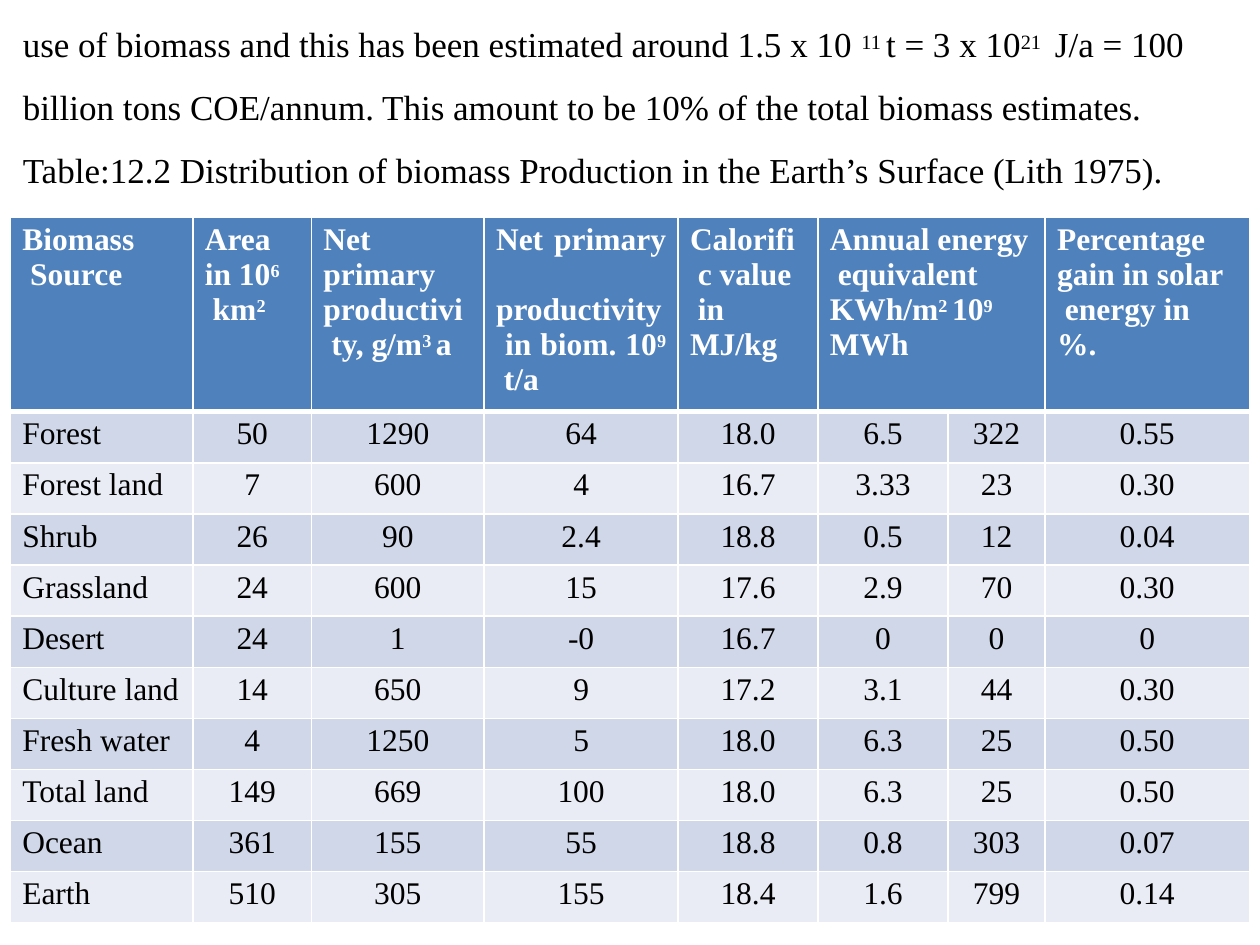
from lxml.etree import SubElement
from pptx import Presentation
from pptx.dml.color import RGBColor
from pptx.enum.text import PP_ALIGN
from pptx.oxml.ns import qn
from pptx.util import Cm, Pt

# Content: text between two ^ marks is superscript, \v is a line break
INTRODUCTION = [
    "use of biomass and this has been estimated around 1.5 x 10 ^11 ^t = 3 x 10^21 ^ J/a = 100",
    "billion tons COE/annum. This amount to be 10% of the total biomass estimates.",
    "Table:12.2 Distribution of biomass Production in the Earth’s Surface (Lith 1975).",
]
HEADERS = [
    "Biomass\v Source",
    "Area in 10^6^\v km^2^",
    "Net primary\vproductivi\v ty, g/m^3 ^a",
    "Net primary\v productivity\v in biom. 10^9^\v t/a",
    "Calorifi\v c value\v in MJ/kg",
    "Annual energy\v equivalent\vKWh/m^2 ^10^9^\vMWh",
    "",
    "Percentage gain in solar\v energy in\v%.",
]
ROWS = [
    ("Forest", "50", "1290", "64", "18.0", "6.5", "322", "0.55"),
    ("Forest land", "7", "600", "4", "16.7", "3.33", "23", "0.30"),
    ("Shrub", "26", "90", "2.4", "18.8", "0.5", "12", "0.04"),
    ("Grassland", "24", "600", "15", "17.6", "2.9", "70", "0.30"),
    ("Desert", "24", "1", "-0", "16.7", "0", "0", "0"),
    ("Culture land", "14", "650", "9", "17.2", "3.1", "44", "0.30"),
    ("Fresh water", "4", "1250", "5", "18.0", "6.3", "25", "0.50"),
    ("Total land", "149", "669", "100", "18.0", "6.3", "25", "0.50"),
    ("Ocean", "361", "155", "55", "18.8", "0.8", "303", "0.07"),
    ("Earth", "510", "305", "155", "18.4", "1.6", "799", "0.14"),
]
COLUMN_WIDTHS = [3.68, 2.39, 3.48, 3.91, 2.82, 2.62, 1.96, 4.11]
HEADER_HEIGHT, ROW_HEIGHT = 3.88, 1.03
JUSTIFIED_COLUMN, MERGED_COLUMN = 3, 5

THEME = {
    "font": "Times New Roman",
    "text": "000000",
    "light": "FFFFFF",
    "header": "4F81BC",
    "bands": ("D0D7E8", "E9ECF4"),
    "body_size": 20,
    "table_size": 18,
}


def write_text(paragraph, text, *, size, color=THEME["text"], bold=False,
               align=PP_ALIGN.LEFT, indent=0, right_indent=0, space_before=0):
    paragraph.alignment = align
    paragraph.space_before = Pt(space_before)
    properties = paragraph._p.get_or_add_pPr()
    properties.set("marL", str(Cm(indent)))
    properties.set("marR", str(Cm(right_indent)))
    properties.set("indent", "0")
    for part_index, part in enumerate(text.split("^")):
        for line_index, line in enumerate(part.split("\v")):
            if line_index:
                paragraph.add_line_break()
            if not line:
                continue
            run = paragraph.add_run()
            run.text = line
            run.font.name = THEME["font"]
            run.font.size = Pt(size)
            run.font.bold = bold
            run.font.color.rgb = RGBColor.from_string(color)
            if part_index % 2:
                run.font._element.set("baseline", "25000")


def set_borders(cell, widths):
    properties = cell._tc.get_or_add_tcPr()
    for side, width in widths.items():
        line = SubElement(properties, qn(f"a:ln{side}"), w=str(Pt(width)))
        fill = SubElement(line, qn("a:solidFill"))
        SubElement(fill, qn("a:srgbClr"), val=THEME["light"])


def format_cell(cell, fill_color, borders):
    cell.margin_left = cell.margin_right = cell.margin_bottom = 0
    cell.margin_top = Cm(0.1)
    set_borders(cell, borders)
    cell.fill.solid()
    cell.fill.fore_color.rgb = RGBColor.from_string(fill_color)


def add_introduction(slide):
    box = slide.shapes.add_textbox(Cm(0.36), 0, Cm(23.75), Cm(3.89))
    frame = box.text_frame
    frame.word_wrap = True
    frame.margin_left = frame.margin_right = frame.margin_bottom = 0
    frame.margin_top = Cm(0.46)
    for index, text in enumerate(INTRODUCTION):
        paragraph = frame.add_paragraph() if index else frame.paragraphs[0]
        write_text(paragraph, text, size=THEME["body_size"], indent=0.1,
                   space_before=12 if index else 0)


def add_biomass_table(slide):
    records = [HEADERS, *ROWS]
    last_row, last_column = len(records) - 1, len(HEADERS) - 1
    table = slide.shapes.add_table(
        len(records), len(HEADERS), Cm(0.21), Cm(4.39),
        Cm(sum(COLUMN_WIDTHS)), Cm(HEADER_HEIGHT + ROW_HEIGHT * len(ROWS))).table
    table.horz_banding = False
    for column, width in zip(table.columns, COLUMN_WIDTHS):
        column.width = Cm(width)
    for index, row in enumerate(table.rows):
        row.height = Cm(ROW_HEIGHT if index else HEADER_HEIGHT)
    table.cell(0, MERGED_COLUMN).merge(table.cell(0, MERGED_COLUMN + 1))

    for row, record in enumerate(records):
        is_header = row == 0
        fill_color = THEME["header"] if is_header else THEME["bands"][(row - 1) % 2]
        for column, text in enumerate(record):
            cell = table.cell(row, column)
            format_cell(cell, fill_color, {
                "L": 1 if column else 0.5,
                "R": 0.5 if column == last_column else 1,
                "T": {0: 0.75, 1: 3}.get(row, 1),
                "B": {0: 3, last_row: 0.5}.get(row, 1),
            })
            if is_header and column == JUSTIFIED_COLUMN:
                align = PP_ALIGN.JUSTIFY
            elif is_header or column == 0:
                align = PP_ALIGN.LEFT
            else:
                align = PP_ALIGN.CENTER
            write_text(
                cell.text_frame.paragraphs[0], text, size=THEME["table_size"],
                color=THEME["light"] if is_header else THEME["text"],
                bold=is_header, align=align,
                indent=0 if align == PP_ALIGN.CENTER else 0.24,
                right_indent=0.24 if is_header else 0)


def main():
    presentation = Presentation()
    presentation.slide_width, presentation.slide_height = Cm(25.4), Cm(19.05)
    slide = presentation.slides.add_slide(presentation.slide_layouts[6])
    add_introduction(slide)
    add_biomass_table(slide)
    presentation.save("out.pptx")


if __name__ == "__main__":
    main()
